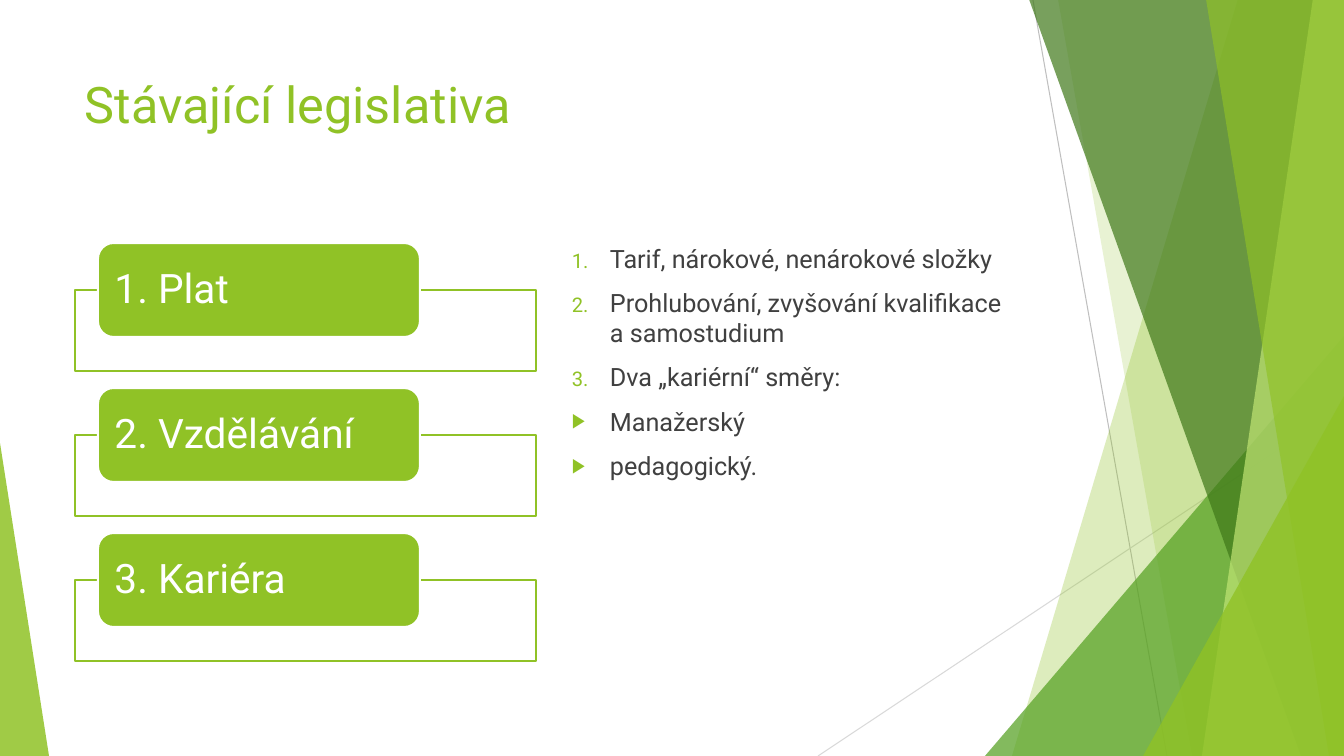
from pptx import Presentation
from pptx import util as u
from pptx.dml.color import RGBColor
from pptx.enum import shapes, text
from pptx.oxml.ns import qn
from lxml import etree

# Content
TITLE = "Stávající legislativa"
TOPICS = ["1. Plat", "2. Vzdělávání", "3. Kariéra"]
NOTES = [
    ("Tarif, nárokové, nenárokové složky", True),
    ("Prohlubování, zvyšování kvalifikace a samostudium", True),
    ("Dva „kariérní“ směry:", True),
    ("Manažerský", False),
    ("pedagogický.", False),
]  # text, numbered

# Backdrop, in px
W, H = 1344, 756
LINES = [((1033, 0), (1167, H), "BFBFBF"), ((W, 406), (818, H), "D9D9D9")]
FACETS = [
    ("band", 1238, 1012, "90C226", 30),   # top left x, bottom left x
    ("band", 1058, 1192, "90C226", 20),
    ("peak", (985, 336, 359, 420), 1, "54A021", 72),   # box, apex
    ("band", 1029, 1301, "3F7819", 70),
    ("band", 1313, 1202, "C0E474", 70),
    ("band", 1206, 1329, "90C226", 65),
    ("peak", (1143, 396, 201, 360), 1, "90C226", 80),
    ("peak", (0, 443, 49, 313), 0, "90C226", 85),
]
GREEN, WHITE, GREY, FONT = "90C226", "FFFFFF", "404040", "Roboto"
PX = 914400 / 100.8


def px(*vals):
    return [u.Emu(round(v * PX)) for v in vals]


def color(code):
    return RGBColor.from_string(code)


def paint(shape, fill, alpha=100, line=None):
    shape.shadow.inherit = False
    shape.fill.solid()
    shape.fill.fore_color.rgb = color(fill)
    if alpha < 100:
        clr = shape._element.spPr.find(qn("a:solidFill"))[0]
        etree.SubElement(clr, qn("a:alpha"), val=str(alpha * 1000))
    if line:
        shape.line.color.rgb = color(line)
        shape.line.width = u.Pt(1.5)
    else:
        shape.line.fill.background()


def write(par, words, size, ink, before=0, spacing=None):
    par.alignment = text.PP_ALIGN.LEFT
    par.space_before = u.Pt(before)
    if spacing:
        par.line_spacing = spacing
    run = par.add_run()
    run.text = words
    run.font.size = u.Pt(size)
    run.font.name = FONT
    run.font.color.rgb = color(ink)


def bullet(par, numbered):
    props = par._p.get_or_add_pPr()
    indent = px(38)[0]
    props.set("marL", str(indent))
    props.set("indent", str(-indent))
    tint = etree.SubElement(props, qn("a:buClr"))
    etree.SubElement(tint, qn("a:srgbClr"), val=GREEN)
    etree.SubElement(props, qn("a:buSzPct"), val="80000")
    if numbered:
        etree.SubElement(props, qn("a:buFont"), typeface=FONT)
        etree.SubElement(props, qn("a:buAutoNum"), type="arabicPeriod")
    else:
        etree.SubElement(props, qn("a:buFont"), typeface="Arial")
        etree.SubElement(props, qn("a:buChar"), char="▶")


def textbox(box):
    frame = slide.shapes.add_textbox(*px(*box)).text_frame
    frame.word_wrap = True
    return frame


deck = Presentation()
deck.slide_width, deck.slide_height = px(W, H)
slide = deck.slides.add_slide(deck.slide_layouts[6])

# Thin lines
for start, end, tone in LINES:
    rule = slide.shapes.add_connector(
        shapes.MSO_CONNECTOR.STRAIGHT, *px(*start, *end))
    rule.line.color.rgb = color(tone)
    rule.line.width = u.Pt(0.75)
    etree.SubElement(rule._element.spPr, qn("a:effectLst"))

# Green facets
for kind, place, edge, tone, alpha in FACETS:
    if kind == "band":
        path = slide.shapes.build_freeform(place, -1, scale=PX)
        path.add_line_segments([(W, -1), (W, H), (edge, H)], close=True)
        facet = path.convert_to_shape()
    else:
        facet = slide.shapes.add_shape(
            shapes.MSO_SHAPE.ISOSCELES_TRIANGLE, *px(*place))
        facet.adjustments[0] = edge
    paint(facet, tone, alpha)

# Title
write(textbox((75, 68, 948, 145)).paragraphs[0], TITLE, 36, GREEN)

# Topic tabs over empty frames
for i, topic in enumerate(TOPICS):
    drop = i * 145
    frame = slide.shapes.add_shape(
        shapes.MSO_SHAPE.RECTANGLE, *px(75, 290 + drop, 461, 81))
    paint(frame, WHITE, 90, GREEN)
    tab = slide.shapes.add_shape(
        shapes.MSO_SHAPE.ROUNDED_RECTANGLE, *px(98, 243 + drop, 322, 94))
    paint(tab, GREEN, line=WHITE)
    body = tab.text_frame
    body.word_wrap = True
    body.vertical_anchor = text.MSO_ANCHOR.MIDDLE
    body.margin_left = body.margin_right = px(12)[0]
    body.margin_top = body.margin_bottom = 0
    write(body.paragraphs[0], topic, 29, WHITE, spacing=0.9)

# Notes
body = textbox((562, 238, 462, 427))
for i, (words, numbered) in enumerate(NOTES):
    par = body.add_paragraph() if i else body.paragraphs[0]
    write(par, words, 18, GREY, before=10)
    bullet(par, numbered)

deck.save("out.pptx")
